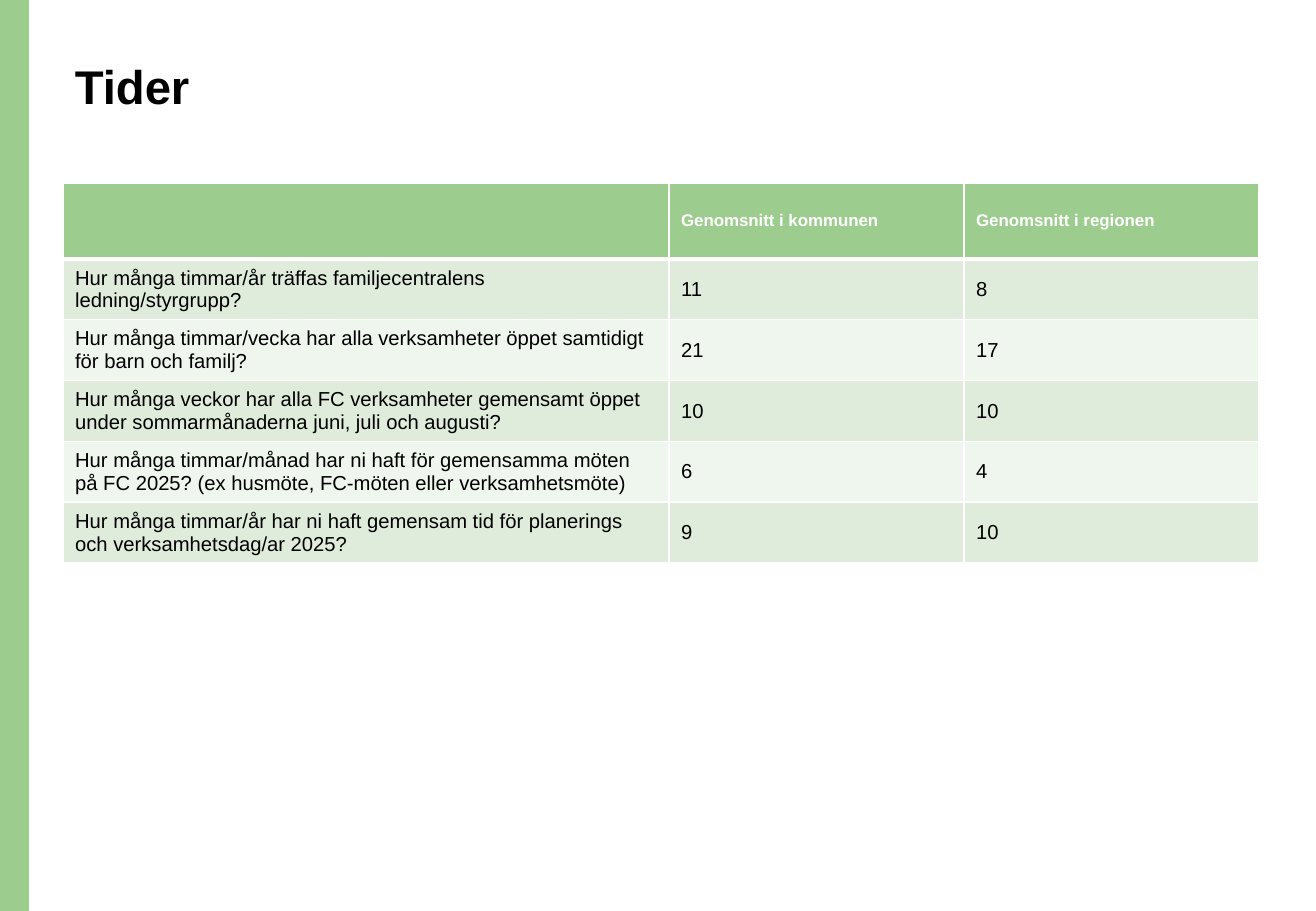
from lxml import etree
from pptx import Presentation
from pptx.dml.color import RGBColor
from pptx.enum.shapes import MSO_SHAPE
from pptx.enum.text import MSO_ANCHOR
from pptx.oxml.ns import qn
from pptx.util import Emu, Pt

RECT = MSO_SHAPE.RECTANGLE
TOP, MIDDLE = MSO_ANCHOR.TOP, MSO_ANCHOR.MIDDLE

GREEN = RGBColor(0x9D, 0xCC, 0x8F)
BAND_DARK = RGBColor(0xDF, 0xEC, 0xDB)
BAND_LIGHT = RGBColor(0xEF, 0xF6, 0xEE)
WHITE = RGBColor(0xFF, 0xFF, 0xFF)
BLACK = RGBColor(0, 0, 0)

EMU_PER_PX = 7526
SLIDE_W, SLIDE_H = 1316, 911

COLUMNS = [606, 295, 295]
HEADER_H, ROW_H = 76, 57
ROWS = [
    ("", "Genomsnitt i kommunen", "Genomsnitt i regionen"),
    ("Hur många timmar/år träffas familjecentralens ledning/styrgrupp?", "11", "8"),
    ("Hur många timmar/vecka har alla verksamheter öppet samtidigt för barn och familj?", "21", "17"),
    ("Hur många veckor har alla FC verksamheter gemensamt öppet under sommarmånaderna "
     "juni, juli och augusti?", "10", "10"),
    ("Hur många timmar/månad har ni haft för gemensamma möten på FC 2025? "
     "(ex husmöte, FC-möten eller verksamhetsmöte)", "6", "4"),
    ("Hur många timmar/år har ni haft gemensam tid för planerings och verksamhetsdag/ar 2025?", "9", "10"),
]


def px(n):
    return Emu(n * EMU_PER_PX)


class SlideBuilder:
    font = "Arial"

    def __init__(self, slide):
        self.s = slide

    def run(self, p, text, size, color, bold=False):
        r = p.add_run()
        r.text = text
        r.font.name, r.font.size, r.font.bold = self.font, Pt(size), bold
        r.font.color.rgb = color

    def bar(self, x, y, w, h, color):
        sp = self.s.shapes.add_shape(RECT, px(x), px(y), px(w), px(h))
        sp.shadow.inherit = False
        sp.fill.solid()
        sp.fill.fore_color.rgb = color
        sp.line.fill.background()

    def title(self, x, y, w, h, text):
        tf = self.s.shapes.add_textbox(px(x), px(y), px(w), px(h)).text_frame
        tf.word_wrap = True
        tf.vertical_anchor = TOP
        p = tf.paragraphs[0]
        p.line_spacing = 0.9
        self.run(p, text, 28, BLACK, bold=True)

    def borders(self, cell, **widths):
        tc_pr = cell._tc.get_or_add_tcPr()
        for side, width in widths.items():
            ln = etree.SubElement(tc_pr, qn(f"a:ln{side}"), w=str(Pt(width)))
            fill = etree.SubElement(ln, qn("a:solidFill"))
            etree.SubElement(fill, qn("a:srgbClr"), val=str(WHITE))

    def table(self, x, y, columns, heights, rows):
        frame = self.s.shapes.add_table(len(rows), len(columns), px(x), px(y),
                                        px(sum(columns)), px(sum(heights)))
        table = frame.table
        for column, width in zip(table.columns, columns):
            column.width = px(width)
        for i, (row, height, texts) in enumerate(zip(table.rows, heights, rows)):
            row.height = px(height)
            header = i == 0
            band = GREEN if header else BAND_DARK if i % 2 else BAND_LIGHT
            for cell, text in zip(row.cells, texts):
                self.borders(cell, L=1, R=1, T=3 if i == 1 else 1, B=3 if header else 1)
                cell.fill.solid()
                cell.fill.fore_color.rgb = band
                cell.vertical_anchor = MIDDLE
                if text:
                    self.run(cell.text_frame.paragraphs[0], text,
                             10 if header else 12, WHITE if header else BLACK, header)


def main():
    prs = Presentation()
    prs.slide_width, prs.slide_height = px(SLIDE_W), px(SLIDE_H)
    b = SlideBuilder(prs.slides.add_slide(prs.slide_layouts[6]))

    # Side bar and title
    b.bar(0, 0, 29, SLIDE_H, GREEN)
    b.title(63, 58, 1135, 124, "Tider")

    # Table of average hours
    heights = [HEADER_H] + [ROW_H] * (len(ROWS) - 1)
    b.table(63, 183, COLUMNS, heights, ROWS)

    prs.save("out.pptx")


if __name__ == "__main__":
    main()
